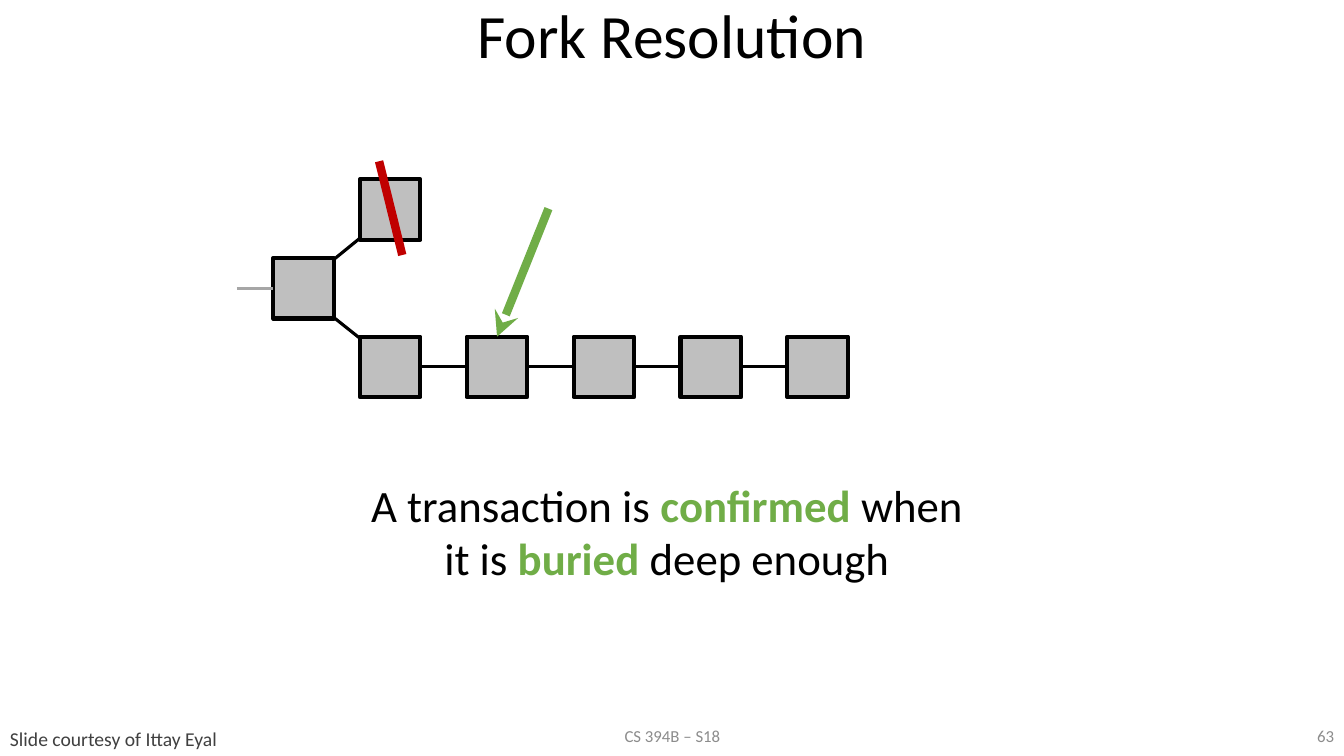
from itertools import pairwise

from lxml.etree import SubElement
from pptx import Presentation
from pptx.dml.color import RGBColor
from pptx.enum.shapes import MSO_CONNECTOR, MSO_SHAPE
from pptx.enum.text import MSO_ANCHOR, MSO_AUTO_SIZE, PP_ALIGN
from pptx.oxml.ns import qn
from pptx.util import Inches, Pt

BLACK, GREEN, RED = "000000", "70AD47", "C00000"
BLOCK_FILL, PAST_GREY, FOOTER_GREY, CREDIT_GREY = "BFBFBF", "A6A6A6", "8C8C8C", "404040"
BLOCK_SIDE, BLOCK_PITCH, CHAIN_LENGTH = 0.6, 1.06, 5
TOP, LEFT, RIGHT = 0, 1, 3


def paint(color_format, color):
    color_format.rgb = RGBColor.from_string(color)


def add_run(paragraph, text, size, color=BLACK, bold=False):
    run = paragraph.add_run()
    run.text = text
    run.font.name = "Calibri"
    run.font.size = Pt(size)
    run.font.bold = bold
    paint(run.font.color, color)


def add_block(slide, left, top):
    block = slide.shapes.add_shape(
        MSO_SHAPE.RECTANGLE, Inches(left), Inches(top), Inches(BLOCK_SIDE), Inches(BLOCK_SIDE)
    )
    block.shadow.inherit = False
    block.fill.solid()
    paint(block.fill.fore_color, BLOCK_FILL)
    paint(block.line.color, BLACK)
    block.line.width = Pt(3)
    return block


def add_link(slide, start, end, color=BLACK, width=2.25):
    link = slide.shapes.add_connector(
        MSO_CONNECTOR.STRAIGHT, *(Inches(length) for length in (*start, *end))
    )
    paint(link.line.color, color)
    link.line.width = Pt(width)
    SubElement(link._element.spPr, qn("a:effectLst"))
    return link


def add_title(slide, left, top, width, height):
    title = slide.shapes.title
    title.left, title.top = Inches(left), Inches(top)
    title.width, title.height = Inches(width), Inches(height)
    title.text_frame.vertical_anchor = MSO_ANCHOR.MIDDLE
    heading = title.text_frame.paragraphs[0]
    heading.alignment = PP_ALIGN.CENTER
    heading.line_spacing = 0.9
    add_run(heading, "Fork Resolution", 44)


def add_fork(slide, left, top):
    def at(x, y):
        return left + x, top + y

    add_link(slide, at(0.86, 1.47), at(1.3, 1.82))
    add_link(slide, at(0.88, 1.04), at(1.31, 0.69))

    root = add_block(slide, *at(0.36, 0.96))
    add_block(slide, *at(1.22, 0.18))
    chain = [add_block(slide, *at(1.22 + BLOCK_PITCH * i, 1.74)) for i in range(CHAIN_LENGTH)]

    past = add_link(slide, at(0, 1.26), at(0.36, 1.26), PAST_GREY)
    past.end_connect(root, LEFT)
    for earlier, later in pairwise(chain):
        link = add_link(slide, at(0, 0), at(1, 1))
        link.begin_connect(earlier, RIGHT)
        link.end_connect(later, LEFT)

    add_link(slide, at(1.41, 0), at(1.64, 0.93), RED, 6)
    confirmation = add_link(slide, at(3.09, 0.47), at(2.58, 1.74), GREEN, 6)
    confirmation.end_connect(chain[1], TOP)
    SubElement(confirmation.line._get_or_add_ln(), qn("a:tailEnd"), type="stealth")


def add_statement(slide, left, top, width, height):
    statement = slide.shapes.add_shape(
        MSO_SHAPE.ROUNDED_RECTANGLE, Inches(left), Inches(top), Inches(width), Inches(height)
    )
    statement.adjustments[0] = 0.076
    statement.shadow.inherit = False
    statement.fill.background()
    statement.line.fill.background()
    frame = statement.text_frame
    frame.word_wrap = True
    frame.auto_size = MSO_AUTO_SIZE.SHAPE_TO_FIT_TEXT
    frame.vertical_anchor = MSO_ANCHOR.TOP
    sentence = frame.paragraphs[0]
    sentence.alignment = PP_ALIGN.CENTER
    add_run(sentence, "A transaction is ", 32)
    add_run(sentence, "confirmed ", 32, GREEN, True)
    add_run(sentence, "when ", 32)
    sentence.add_line_break()
    add_run(sentence, "it is ", 32)
    add_run(sentence, "buried ", 32, GREEN, True)
    add_run(sentence, "deep enough ", 32)


def add_note(slide, box, text, size, color, alignment, anchor, wrap=True):
    note = slide.shapes.add_textbox(*(Inches(length) for length in box))
    note.text_frame.word_wrap = wrap
    note.text_frame.vertical_anchor = anchor
    line = note.text_frame.paragraphs[0]
    line.alignment = alignment
    add_run(line, text, size, color)


def add_footer(slide, top, width):
    add_note(slide, (0, top + 0.06, 2.28, 0.34), "Slide courtesy of Ittay Eyal",
             14, CREDIT_GREY, PP_ALIGN.LEFT, MSO_ANCHOR.TOP, False)
    add_note(slide, (4.42, top, 4.5, 0.4), "CS 394B – S18",
             12, FOOTER_GREY, PP_ALIGN.CENTER, MSO_ANCHOR.MIDDLE)
    add_note(slide, (width - 1.19, top, 1.19, 0.4), "63",
             12, FOOTER_GREY, PP_ALIGN.RIGHT, MSO_ANCHOR.MIDDLE)


def main():
    deck = Presentation()
    deck.slide_width, deck.slide_height = Inches(13.33), Inches(7.5)
    slide = deck.slides.add_slide(deck.slide_layouts[5])
    add_title(slide, 0, 0, 13.33, 0.77)
    add_statement(slide, 2.03, 4.66, 9.27, 1.22)
    add_fork(slide, 2.35, 1.6)
    add_footer(slide, 7.1, 13.33)
    deck.save("out.pptx")


if __name__ == "__main__":
    main()
